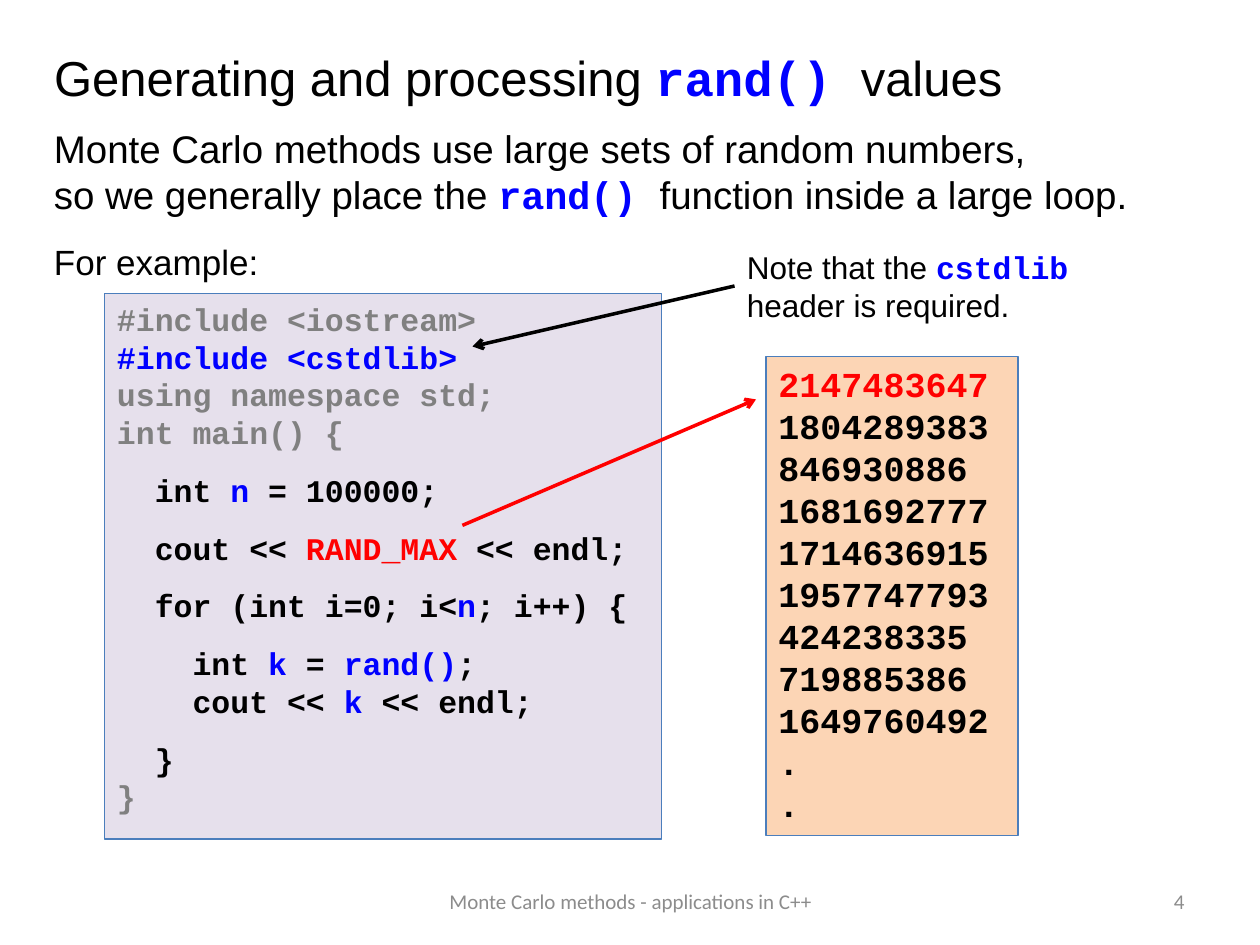
from lxml.etree import SubElement
from pptx import Presentation
from pptx.dml.color import RGBColor
from pptx.enum.shapes import MSO_CONNECTOR as CONNECTOR, MSO_SHAPE as SHAPE
from pptx.enum.text import MSO_ANCHOR as ANCHOR, MSO_AUTO_SIZE as AUTO_SIZE, PP_ALIGN as ALIGN
from pptx.oxml.ns import qn
from pptx.util import Inches, Pt

THEME = {
    "sizes": {"title": 28, "body": 22, "example": 20, "code": 18,
              "output": 20, "note": 18, "footer": 12},
    # run style: font, colour, bold
    "styles": {
        "prose": ("Arial", "000000", False),
        "footer": ("Calibri", "8C8C8C", False),
        "code": ("Courier New", "000000", True),
        "key": ("Courier New", "0000FF", True),
        "frame": ("Courier New", "808080", True),
        "limit": ("Courier New", "FF0000", True),
    },
    "code_fill": "E6E0EC", "output_fill": "FCD5B5", "border": "4B7EBC",
    "note_arrow": "000000", "limit_arrow": "FF0000",
    "block_gap": 11.4,   # points between blocks of text
    "indent": 0.3,       # inches per code level: two characters
}

# Content: a paragraph is a list of (text, style) runs
TITLE = [[("Generating and processing ", "prose"), ("rand() ", "key"), ("values", "prose")]]
INTRO = [
    [("Monte Carlo methods use large sets of random numbers,", "prose")],
    [("so we generally place the ", "prose"), ("rand() ", "key"),
     ("function inside a large loop.", "prose")],
]
EXAMPLE = [[("For example:", "prose")]]
NOTE = [
    [("Note that the ", "prose"), ("cstdlib", "key")],
    [("header is required.", "prose")],
]
# Code blocks are set apart by a gap; each line is (level, runs)
CODE_BLOCKS = [
    [(0, [("#include <iostream>", "frame")]),
     (0, [("#include <cstdlib>", "key")]),
     (0, [("using namespace std;", "frame")]),
     (0, [("int main() {", "frame")])],
    [(1, [("int", "code"), (" n ", "key"), ("= 100000;", "code")])],
    [(1, [("cout << ", "code"), ("RAND_MAX", "limit"), (" << endl;", "code")])],
    [(1, [("for (int i=0; i<", "code"), ("n", "key"), ("; i++) {", "code")])],
    [(2, [("int", "code"), (" k ", "key"), ("=", "code"), (" rand()", "key"), (";", "code")]),
     (2, [("cout << ", "code"), ("k", "key"), (" << endl;", "code")])],
    [(1, [("}", "code")]),
     (0, [("}", "frame")])],
]
RAND_MAX = "2147483647"
VALUES = ["1804289383", "846930886", "1681692777", "1714636915", "1957747793",
          "424238335", "719885386", "1649760492", ".", "."]
FOOTER = "Monte Carlo methods - applications in C++"
PAGE = "4"


def write_text(shape, paragraphs, *, size, levels=(), gaps=(),
               align=ALIGN.LEFT, anchor=ANCHOR.TOP):
    """Fill shape; levels gives each line's indent, gaps the lines after a gap."""
    frame = shape.text_frame
    frame.word_wrap = True
    frame.auto_size = AUTO_SIZE.NONE
    frame.vertical_anchor = anchor
    for i, runs in enumerate(paragraphs):
        para = frame.paragraphs[0] if i == 0 else frame.add_paragraph()
        para.alignment = align
        para.space_before = Pt(THEME["block_gap"] if i in gaps else 0)
        if levels and levels[i]:
            para._p.get_or_add_pPr().set("marL", str(Inches(levels[i] * THEME["indent"])))
        for text, style in runs:
            run = para.add_run()
            run.text = text
            font = run.font
            font.name, colour, font.bold = THEME["styles"][style]
            font.size = Pt(THEME["sizes"][size])
            font.color.rgb = RGBColor.from_string(colour)


def add_text(slide, box, paragraphs, **fmt):
    write_text(slide.shapes.add_textbox(*map(Inches, box)), paragraphs, **fmt)


def add_panel(slide, box, fill, paragraphs, **fmt):
    panel = slide.shapes.add_shape(SHAPE.RECTANGLE, *map(Inches, box))
    panel.shadow.inherit = False
    panel.fill.solid()
    panel.fill.fore_color.rgb = RGBColor.from_string(fill)
    panel.line.color.rgb = RGBColor.from_string(THEME["border"])
    panel.line.width = Pt(0.75)
    write_text(panel, paragraphs, **fmt)


def add_arrow(slide, start, end, colour):
    arrow = slide.shapes.add_connector(CONNECTOR.STRAIGHT, *map(Inches, start + end))
    arrow.line.color.rgb = RGBColor.from_string(colour)
    arrow.line.width = Pt(2)
    SubElement(arrow.line._get_or_add_ln(), qn("a:tailEnd"), type="arrow")
    SubElement(arrow._element.spPr, qn("a:effectLst"))


def main():
    deck = Presentation()
    deck.slide_width, deck.slide_height = Inches(10), Inches(7.5)
    slide = deck.slides.add_slide(deck.slide_layouts[5])

    # Title and introduction
    title = slide.shapes.title
    title.left, title.top, title.width, title.height = map(Inches, (0.33, 0.33, 9.08, 0.6))
    write_text(title, TITLE, size="title")
    add_text(slide, (0.33, 0.94, 9.08, 0.85), INTRO, size="body")
    add_text(slide, (0.33, 1.86, 3, 0.43), EXAMPLE, size="example")

    # Footer
    add_text(slide, (3.42, 6.95, 3.17, 0.4), [[(FOOTER, "footer")]],
             size="footer", align=ALIGN.CENTER, anchor=ANCHOR.MIDDLE)
    add_text(slide, (7.17, 6.95, 2.33, 0.4), [[(PAGE, "footer")]],
             size="footer", align=ALIGN.RIGHT, anchor=ANCHOR.MIDDLE)

    # Program listing
    lines, gaps = [], []
    for block in CODE_BLOCKS:
        if lines:
            gaps.append(len(lines))
        lines += block
    levels, code = zip(*lines)
    add_panel(slide, (0.83, 2.33, 4.42, 4.33), THEME["code_fill"], code,
              size="code", levels=levels, gaps=gaps)

    # Program output
    output = [[(RAND_MAX, "limit")]] + [[(value, "code")] for value in VALUES]
    add_panel(slide, (6.08, 2.83, 2, 3.8), THEME["output_fill"], output, size="output")

    # Note and arrows
    add_text(slide, (5.83, 1.92, 3, 0.71), NOTE, size="note")
    add_arrow(slide, (5.83, 2.27), (3.75, 2.75), THEME["note_arrow"])
    add_arrow(slide, (3.67, 4.17), (6, 3.17), THEME["limit_arrow"])

    deck.save("out.pptx")


if __name__ == "__main__":
    main()
